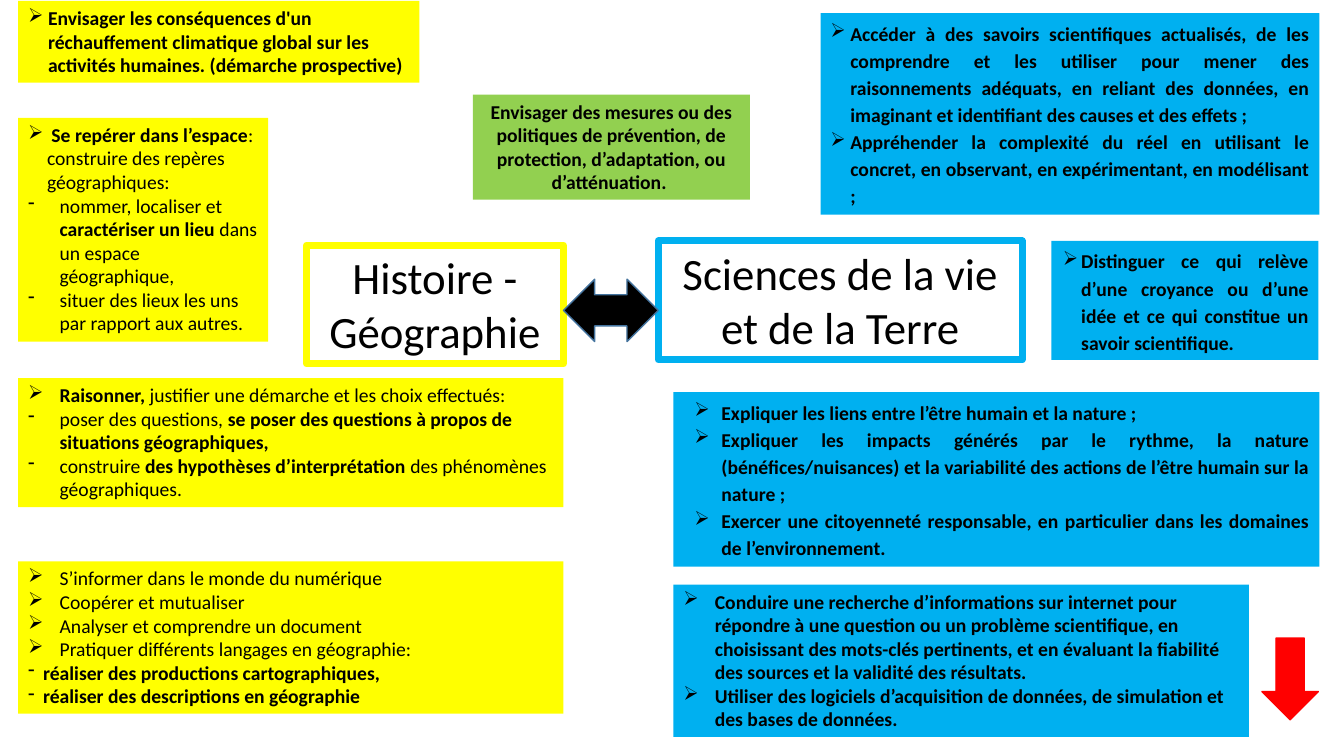
from lxml.etree import SubElement
from pptx import Presentation
from pptx.dml.color import RGBColor
from pptx.enum.shapes import MSO_SHAPE
from pptx.enum.text import MSO_AUTO_SIZE, PP_ALIGN
from pptx.oxml.ns import qn
from pptx.util import Pt

YELLOW, BLUE, GREEN, RED, BLACK = "FFFF00", "00B0F0", "92D050", "FF0000", "000000"
LEFT, CENTER, JUSTIFY = PP_ALIGN.LEFT, PP_ALIGN.CENTER, PP_ALIGN.JUSTIFY
WIDE = (22.5, 22.5)  # text margin and bullet hang
TIGHT = (10.7, 10.7)

# Subject headings: text, outline, (left, top, width, height)
SUBJECTS = [
    ("Histoire - Géographie", YELLOW, (218.9, 175, 183.6, 85)),
    ("Sciences de la vie et de la Terre", BLUE, (470.2, 172.1, 259.9, 85)),
]

SHARED = ("Envisager des mesures ou des politiques de prévention, de protection, "
          "d’adaptation, ou d’atténuation. ")
SHARED_BOX = (337.7, 67.7, 198, 74.9)

# Skills: box, lines of (bullet, indent, text); ** switches bold on and off
GEOGRAPHY = [
    ((13, 0.7, 286.6, 58.3), [
        ("➢", (14.2, 14.2), "**Envisager les conséquences d'un réchauffement climatique "
         "global sur les activités humaines. (démarche prospective)**"),
    ]),
    ((13, 84.2, 178.6, 159.8), [
        ("➢", (13.5, 13.5), "** Se repérer dans l’espace**: construire des repères géographiques:"),
        ("-", WIDE, "nommer, localiser et **caractériser un lieu** dans un espace géographique,"),
        ("-", WIDE, "situer des lieux les uns par rapport aux autres."),
    ]),
    ((13, 270, 389.5, 92.2), [
        ("➢", WIDE, "**Raisonner,** justifier une démarche et les choix effectués:"),
        ("-", WIDE, "poser des questions, **se poser des questions à propos de "
         "situations géographiques,**"),
        ("-", WIDE, "construire **des hypothèses d’interprétation **des phénomènes géographiques."),
    ]),
    ((13, 401, 389.5, 108.7), [
        ("➢", WIDE, "S’informer dans le monde du numérique"),
        ("➢", WIDE, "Coopérer et mutualiser"),
        ("➢", WIDE, "Analyser et comprendre un document"),
        ("➢", WIDE, "Pratiquer différents langages en géographie:"),
        ("-", TIGHT, "**réaliser des productions cartographiques,**"),
        ("-", TIGHT, "**réaliser des descriptions en géographie**"),
    ]),
]

# Skills: box, alignment, line spacing, indent, bold lines
SCIENCE = [
    ((481, 280.1, 461.5, 124.6), JUSTIFY, 1.15, (27.2, 19.4), [
        "Expliquer les liens entre l’être humain et la nature ;",
        "Expliquer les impacts générés par le rythme, la nature (bénéfices/nuisances) "
        "et la variabilité des actions de l’être humain sur la nature ; ",
        "Exercer une citoyenneté responsable, en particulier dans les domaines de "
        "l’environnement.",
    ]),
    ((586.1, 9.4, 356.4, 144), JUSTIFY, 1.15, (14.2, 14.2), [
        "Accéder à des savoirs scientifiques actualisés, de les comprendre et les utiliser "
        "pour mener des raisonnements adéquats, en reliant des données, en imaginant et "
        "identifiant des causes et des effets ;",
        "Appréhender la complexité du réel en utilisant le concret, en observant, "
        "en expérimentant, en modélisant ;",
    ]),
    ((751, 172.1, 190.8, 85), JUSTIFY, 1.15, (14.2, 13), [
        "Distinguer ce qui relève d’une croyance ou d’une idée et ce qui constitue un "
        "savoir scientifique.",
    ]),
    ((481, 417.6, 411.1, 108.7), LEFT, 1.0, WIDE, [
        "Conduire une recherche d’informations sur internet pour répondre à une question "
        "ou un problème scientifique, en choisissant des mots-clés pertinents, et en "
        "évaluant la fiabilité des sources et la validité des résultats.",
        "Utiliser des logiciels d’acquisition de données, de simulation et des bases "
        "de données.",
    ]),
]

# Arrows: shape, box, fill, outline
ARROWS = [
    (MSO_SHAPE.LEFT_RIGHT_ARROW, (402.5, 199.4, 67.7, 44.6), BLACK, "43739E"),
    (MSO_SHAPE.DOWN_ARROW, (901.4, 455.8, 40.3, 58.3), RED, RED),
]


def color(value):
    return RGBColor.from_string(value)


def paint(sp, fill=None, line=None, weight=1):
    if fill:
        sp.fill.solid()
        sp.fill.fore_color.rgb = color(fill)
    if line:
        sp.line.color.rgb = color(line)
        sp.line.width = Pt(weight)


def write(p, text, size=14, align=LEFT, spacing=1.0, bullet=None, indent=(0, 0)):
    p.alignment = align
    p.line_spacing = spacing
    for i, part in enumerate(text.split("**")):
        if part:
            r = p.add_run()
            r.text = part
            r.font.name = "Calibri"
            r.font.size = Pt(size)
            r.font.bold = i % 2 == 1
            r.font.color.rgb = color(BLACK)
    if bullet:
        margin, hang = indent
        pPr = p._p.get_or_add_pPr()
        pPr.set("marL", str(Pt(margin)))
        pPr.set("indent", str(-Pt(hang)))
        SubElement(pPr, qn("a:buChar")).set("char", bullet)


def add_box(s, box, lines, fill=None, line=None, **fmt):
    sp = s.shapes.add_textbox(*map(Pt, box))
    paint(sp, fill, line, weight=5)
    tf = sp.text_frame
    tf.word_wrap = True
    tf.auto_size = MSO_AUTO_SIZE.SHAPE_TO_FIT_TEXT
    for i, (bullet, indent, text) in enumerate(lines):
        p = tf.add_paragraph() if i else tf.paragraphs[0]
        write(p, text, bullet=bullet, indent=indent, **fmt)


def main():
    prs = Presentation()
    prs.slide_width, prs.slide_height = Pt(960), Pt(540)
    s = prs.slides.add_slide(prs.slide_layouts[6])

    # Subjects and the measures they share
    for text, line, box in SUBJECTS:
        add_box(s, box, [(None, None, text)], line=line, size=32, align=CENTER)
    add_box(s, SHARED_BOX, [(None, None, f"**{SHARED}**")], fill=GREEN, align=CENTER)

    # Skills of each subject
    for box, lines in GEOGRAPHY:
        add_box(s, box, lines, fill=YELLOW)
    for box, align, spacing, indent, texts in SCIENCE:
        lines = [("➢", indent, f"**{text}**") for text in texts]
        add_box(s, box, lines, fill=BLUE, align=align, spacing=spacing)

    # Arrows
    for kind, box, fill, line in ARROWS:
        sp = s.shapes.add_shape(kind, *map(Pt, box))
        sp.shadow.inherit = False
        paint(sp, fill, line)

    prs.save("out.pptx")


if __name__ == "__main__":
    main()
